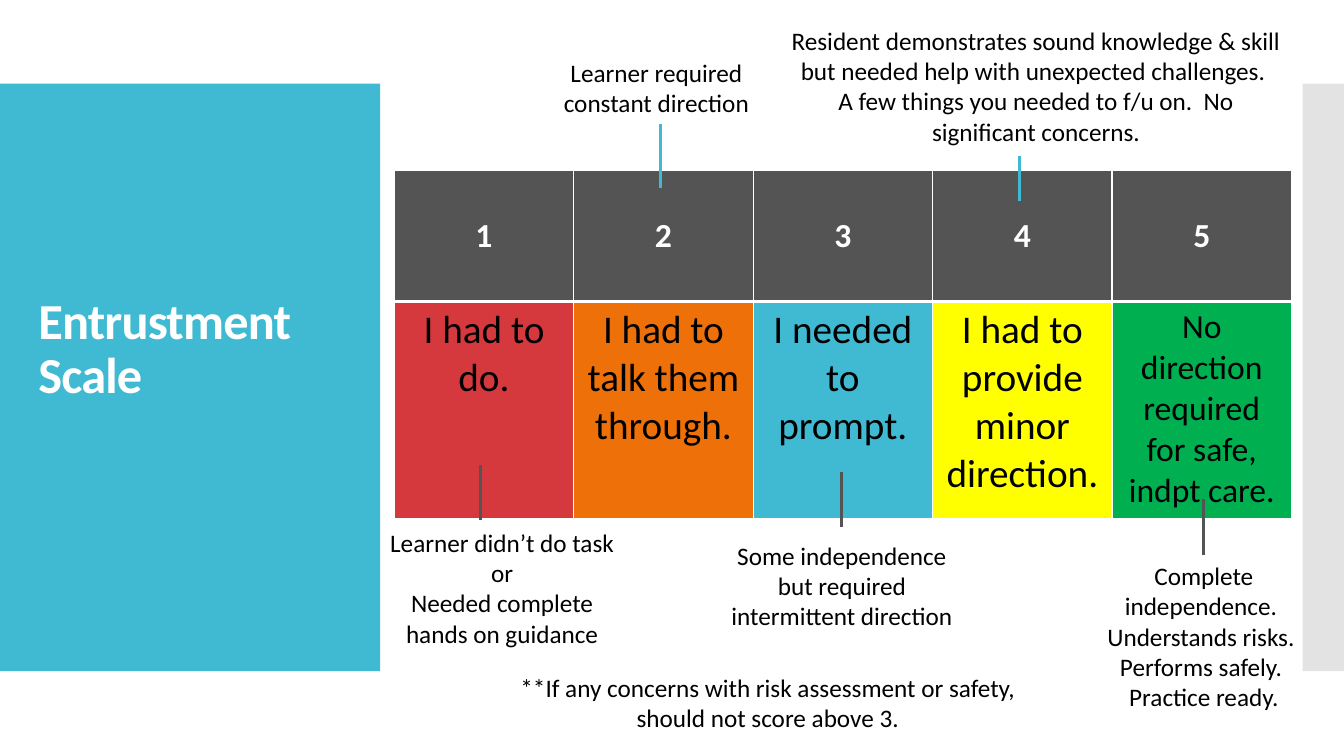
from typing import NamedTuple

from lxml.etree import SubElement
from pptx import Presentation
from pptx.dml.color import RGBColor
from pptx.enum.shapes import MSO_CONNECTOR as Link, MSO_SHAPE as Form
from pptx.enum.text import MSO_ANCHOR as Anchor, MSO_AUTO_SIZE as Fit, PP_ALIGN as Align
from pptx.oxml.ns import qn
from pptx.util import Emu, Pt

SCALE = 9144  # EMU per px, 100 px to the inch
FONT = "Calibri"
WHITE = RGBColor(0xFF, 0xFF, 0xFF)
BLACK = RGBColor(0, 0, 0)
TEAL = RGBColor(0x40, 0xBA, 0xD2)
GRAY = RGBColor(0x54, 0x54, 0x54)
SILVER = RGBColor(0xC8, 0xC8, 0xC8)
RED = RGBColor(0xD5, 0x39, 0x3D)
ORANGE = RGBColor(0xEE, 0x70, 0x08)
YELLOW = RGBColor(0xFF, 0xFF, 0)
GREEN = RGBColor(0, 0xB0, 0x50)


class Level(NamedTuple):
    text: str
    fill: RGBColor
    size: int = 28


class Note(NamedTuple):
    left: int
    top: int
    width: int
    height: int
    lines: tuple[str, ...]


class Stem(NamedTuple):
    x: int
    top: int
    end: int
    color: RGBColor


LEVELS = [
    Level("I had to do.", RED),
    Level("I had to talk them through.", ORANGE),
    Level("I needed to prompt.", TEAL),
    Level("I had to provide minor direction.", YELLOW),
    Level("No direction required for safe, indpt care.", GREEN, 24),
]
NOTES = [
    Note(374, 518, 248, 131, ("Learner didn’t do task or",
                              "Needed complete hands on guidance")),
    Note(527, 52, 248, 71, ("Learner required", "constant direction")),
    Note(711, 531, 248, 101, (
        "Some independence but required intermittent direction",)),
    Note(775, 20, 505, 131, (
        "Resident demonstrates sound knowledge & skill but needed help with "
        "unexpected challenges.  A few things you needed to f/u on.  "
        "No significant concerns.",)),
    Note(1070, 551, 248, 162, (
        "Complete independence.  Understands risks.  Performs safely.  "
        "Practice ready.",)),
    Note(498, 662, 527, 71, (
        "**If any concerns with risk assessment or safety, "
        "should not score above 3.",)),
]
STEMS = [
    Stem(477, 461, 516, GRAY),
    Stem(655, 123, 187, TEAL),
    Stem(835, 468, 523, GRAY),
    Stem(1011, 155, 199, TEAL),
    Stem(1194, 495, 551, GRAY),
]


def px(*nums: int) -> list[Emu]:
    return [Emu(num * SCALE) for num in nums]


def add_run(para, text: str, size: int, color: RGBColor, bold: bool = False):
    run = para.add_run()
    run.text = text
    font = run.font
    font.name, font.size, font.bold = FONT, Pt(size), bold
    font.color.rgb = color
    return run


def add_panel(slide, box: tuple[int, ...], color: RGBColor, alpha: int = 100) -> None:
    panel = slide.shapes.add_shape(Form.RECTANGLE, *px(*box))
    panel.shadow.inherit = False
    panel.fill.solid()
    panel.fill.fore_color.rgb = color
    panel.line.fill.background()
    if alpha < 100:
        tint = panel._element.spPr.find(qn("a:solidFill"))[0]
        SubElement(tint, qn("a:alpha"), val=str(alpha * 1000))
    # Panels lie behind the title
    slide.shapes.title._element.addprevious(panel._element)


def add_title(slide) -> None:
    title = slide.shapes.title
    title.left, title.top, title.width, title.height = px(28, 96, 322, 503)
    frame = title.text_frame
    frame.word_wrap = True
    frame.vertical_anchor = Anchor.MIDDLE
    para = frame.paragraphs[0]
    para.alignment = Align.LEFT
    para.line_spacing = 0.9
    for num, word in enumerate(("Entrustment", "Scale")):
        if num:
            para.add_line_break()
        run = add_run(para, word, 36, WHITE, True)
        run.font._element.set("spc", "-60")


def fill_cell(cell, level: Level, color: RGBColor, head: bool) -> None:
    para = cell.text_frame.paragraphs[0]
    para.alignment = Align.CENTER
    add_run(para, level.text, level.size, color, head)
    cell.vertical_anchor = Anchor.MIDDLE if head else Anchor.TOP
    # Borders come before the fill in the cell's XML
    props = cell._tc.get_or_add_tcPr()
    for side in "LRTB":
        # The rule between the rows is thicker
        thick = side == ("B" if head else "T")
        edge = SubElement(props, qn(f"a:ln{side}"), w=str(Pt(3 if thick else 1)))
        paint = SubElement(edge, qn("a:solidFill"))
        SubElement(paint, qn("a:srgbClr"), val=str(WHITE))
    cell.fill.solid()
    cell.fill.fore_color.rgb = level.fill


def add_scale(slide) -> None:
    count = len(LEVELS)
    table = slide.shapes.add_table(2, count, *px(391, 169, 178 * count, 345)).table
    table.horz_banding = False
    table.rows[0].height, table.rows[1].height = px(130, 215)
    for num, level in enumerate(LEVELS):
        table.columns[num].width = px(178)[0]
        fill_cell(table.cell(0, num), Level(str(num + 1), GRAY, 24), WHITE, True)
        fill_cell(table.cell(1, num), level, BLACK, False)


def add_note(slide, note: Note) -> None:
    box = slide.shapes.add_textbox(*px(*note[:4]))
    frame = box.text_frame
    frame.word_wrap = True
    frame.auto_size = Fit.SHAPE_TO_FIT_TEXT
    for num, line in enumerate(note.lines):
        para = frame.add_paragraph() if num else frame.paragraphs[0]
        para.alignment = Align.CENTER
        add_run(para, line, 18, BLACK)


def add_stem(slide, stem: Stem) -> None:
    ends = px(stem.x, stem.top, stem.x, stem.end)
    line = slide.shapes.add_connector(Link.STRAIGHT, *ends)
    line.line.color.rgb = stem.color
    line.line.width = Pt(2)
    SubElement(line._element.spPr, qn("a:effectLst"))


def main() -> None:
    deck = Presentation()
    deck.slide_width, deck.slide_height = px(1333, 750)
    slide = deck.slides.add_slide(deck.slide_layouts[5])

    # Side panels and title
    add_panel(slide, (0, 83, 377, 583), TEAL)
    add_panel(slide, (1292, 83, 41, 583), SILVER, 50)
    add_title(slide)

    # Scale with its notes
    add_scale(slide)
    for note in NOTES:
        add_note(slide, note)
    for stem in STEMS:
        add_stem(slide, stem)

    deck.save("out.pptx")


if __name__ == "__main__":
    main()
